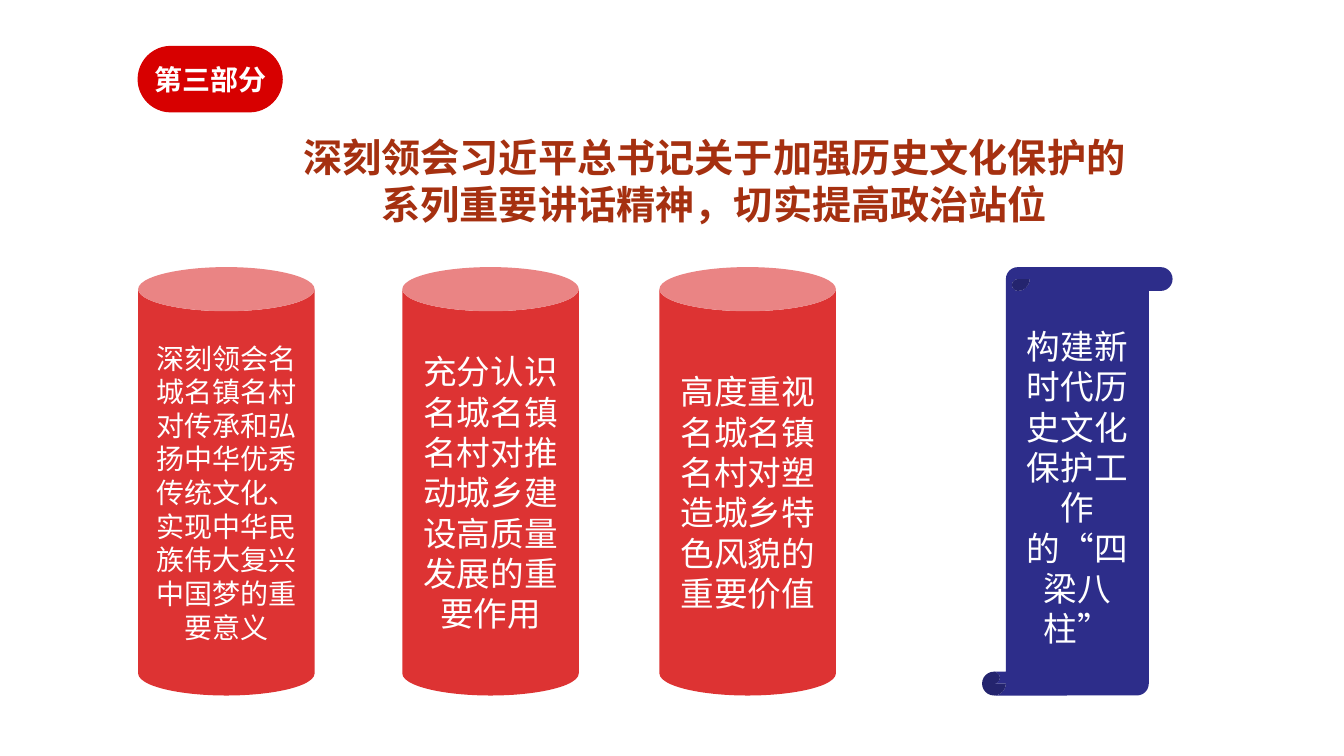
from lxml import etree
from pptx import Presentation
from pptx.dml.color import RGBColor
from pptx.enum.shapes import MSO_SHAPE as Shape
from pptx.enum.text import MSO_ANCHOR as Anchor, PP_ALIGN as Align
from pptx.oxml.ns import qn
from pptx.util import Inches, Pt

CJK_FONT = "Noto Sans CJK SC"
WHITE, RED, PILLAR_RED, RUST, NAVY = "FFFFFF", "D70000", "DD3333", "A53010", "2D2D8A"
PILLAR_TOP, PILLAR_WIDTH, PILLAR_HEIGHT = 2.65, 1.75, 4.25


def color(value):
    return RGBColor.from_string(value)


def write(frame, lines, size, ink=WHITE, font="Arial", bold=False):
    """Centre each line as its own paragraph."""
    for index, line in enumerate(lines):
        para = frame.paragraphs[0] if index == 0 else frame.add_paragraph()
        para.alignment = Align.CENTER
        span = para.add_run()
        span.text = line
        span.font.size = Pt(size)
        span.font.bold = bold
        span.font.color.rgb = color(ink)
        span.font.name = font
        # East Asian typeface for the Chinese characters
        east_asian = etree.SubElement(span.font._element, qn("a:ea"))
        east_asian.set("typeface", CJK_FONT)


def add_panel(page, kind, box, fill):
    panel = page.shapes.add_shape(kind, *(Inches(length) for length in box))
    panel.shadow.inherit = False
    panel.fill.solid()
    panel.fill.fore_color.rgb = color(fill)
    panel.line.fill.background()
    panel.text_frame.word_wrap = True
    panel.text_frame.vertical_anchor = Anchor.MIDDLE
    return panel


def add_badge(page, box, label):
    badge = add_panel(page, Shape.ROUNDED_RECTANGLE, box, RED)
    badge.adjustments[0] = 0.5
    badge.line.color.rgb = color(RED)
    badge.line.width = Pt(0.75)
    frame = badge.text_frame
    frame.margin_left = frame.margin_right = frame.margin_top = frame.margin_bottom = 0
    write(frame, [label], 20, font=CJK_FONT, bold=True)


def add_title(page, box, lines):
    title = page.shapes.add_textbox(*(Inches(length) for length in box))
    title.text_frame.word_wrap = False
    write(title.text_frame, lines, 28, RUST, CJK_FONT, bold=True)


def add_pillars(page, top, width, height, pillars):
    for left, size, text in pillars:
        pillar = add_panel(page, Shape.CAN, (left, top, width, height), PILLAR_RED)
        write(pillar.text_frame, [text], size)


def add_scroll(page, box, text):
    scroll = add_panel(page, Shape.VERTICAL_SCROLL, box, NAVY)
    write(scroll.text_frame, [text], 24)


def main():
    deck = Presentation()
    deck.slide_width, deck.slide_height = Inches(13.33), Inches(7.5)
    page = deck.slides.add_slide(deck.slide_layouts[6])

    # Heading
    add_badge(page, (1.37, 0.46, 1.43, 0.65), "第三部分")
    add_title(page, (2.27, 1.27, 9.63, 0.57), [
        "深刻领会习近平总书记关于加强历史文化保护的",
        "系列重要讲话精神，切实提高政治站位",
    ])

    # Three pillars: left edge, text size, wording
    add_pillars(page, PILLAR_TOP, PILLAR_WIDTH, PILLAR_HEIGHT, [
        (1.37, 20, "深刻领会名城名镇名村对传承和弘扬中华优秀传统文化、实现中华民族伟大复兴中国梦的重要意义"),
        (3.99, 24, "充分认识名城名镇名村对推动城乡建设高质量发展的重要作用"),
        (6.54, 24, "高度重视名城名镇名村对塑造城乡特色风貌的重要价值"),
    ])

    # Closing scroll
    add_scroll(page, (9.74, PILLAR_TOP, 1.89, PILLAR_HEIGHT),
               "构建新时代历史文化保护工作的“四梁八柱”")

    deck.save("out.pptx")


if __name__ == "__main__":
    main()
